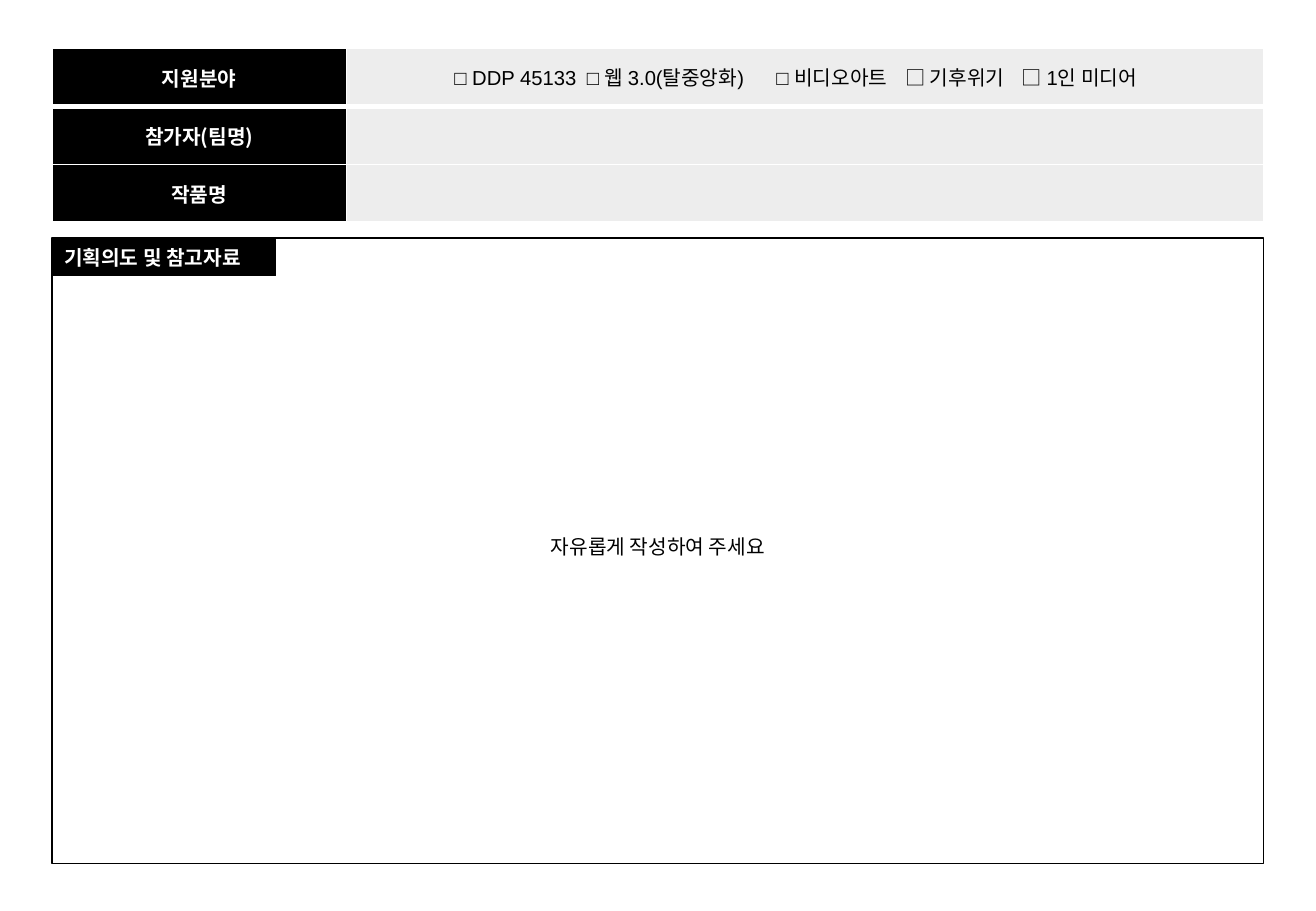
from dataclasses import dataclass

import lxml.etree
import pptx
import pptx.dml.color
import pptx.enum.shapes
import pptx.enum.text
import pptx.oxml.ns
import pptx.util

Inches = pptx.util.Inches
Pt = pptx.util.Pt
qn = pptx.oxml.ns.qn
Align = pptx.enum.text.PP_ALIGN
Anchor = pptx.enum.text.MSO_ANCHOR


@dataclass(frozen=True)
class Theme:
    """Colours, fonts and sizes of the form."""
    ink: str = "000000"
    paper: str = "FFFFFF"
    field: str = "EDEDED"
    latin: str = "Arial"
    korean: str = "Noto Sans CJK KR"
    size: int = 12
    rule: int = 1
    heavy_rule: int = 3


THEME = Theme()
LABELS = ["지원분야", "참가자(팀명)", "작품명"]
CATEGORIES = ["□ DDP 45133", "□ 웹 3.0(탈중앙화)", "□ 비디오아트", "□ 기후위기", "□ 1인 미디어"]
CATEGORY_STOPS = [1.09, 2.65, 3.71, 4.67]


def rgb(value):
    """Turn a hex string into a colour."""
    return pptx.dml.color.RGBColor.from_string(value)


def write(frame, text, align=Align.LEFT, color=THEME.ink, font=THEME.latin, bold=False, stops=()):
    """Set one styled paragraph in a text frame."""
    paragraph = frame.paragraphs[0]
    paragraph.text = text
    paragraph.alignment = align
    properties = paragraph._p.get_or_add_pPr()
    if stops:
        tabs = lxml.etree.SubElement(properties, qn("a:tabLst"))
        for stop in stops:
            lxml.etree.SubElement(tabs, qn("a:tab"), pos=str(Inches(stop)), algn="l")
    paragraph.font.name = font
    paragraph.font.size = Pt(THEME.size)
    paragraph.font.bold = bold
    paragraph.font.color.rgb = rgb(color)
    defaults = properties.find(qn("a:defRPr"))
    lxml.etree.SubElement(defaults, qn("a:ea"), typeface=THEME.korean)


def add_text(slide, left, top, width, height, text, inset=0.1, **style):
    """Add a wrapping line of text."""
    box = slide.shapes.add_textbox(Inches(left), Inches(top), Inches(width), Inches(height))
    box.text_frame.word_wrap = True
    box.text_frame.margin_left = Inches(inset)
    write(box.text_frame, text, **style)


def add_rectangle(slide, left, top, width, height, line_width, fill=None):
    """Add an outlined rectangle, hollow unless a fill is given."""
    rectangle = slide.shapes.add_shape(
        pptx.enum.shapes.MSO_SHAPE.RECTANGLE,
        Inches(left), Inches(top), Inches(width), Inches(height))
    rectangle.shadow.inherit = False
    if fill:
        rectangle.fill.solid()
        rectangle.fill.fore_color.rgb = rgb(fill)
    else:
        rectangle.fill.background()
    rectangle.line.color.rgb = rgb(THEME.ink)
    rectangle.line.width = Pt(line_width)
    return rectangle


def style_cell(cell, fill, top, bottom):
    """Give a cell its borders and fill."""
    properties = cell._tc.get_or_add_tcPr()
    for side, width in (("L", THEME.rule), ("R", THEME.rule), ("T", top), ("B", bottom)):
        line = lxml.etree.SubElement(properties, qn(f"a:ln{side}"), w=str(Pt(width)))
        paint = lxml.etree.SubElement(line, qn("a:solidFill"))
        lxml.etree.SubElement(paint, qn("a:srgbClr"), val=THEME.paper)
    cell.fill.solid()
    cell.fill.fore_color.rgb = rgb(fill)


def add_entry_table(slide, left, top, width, height):
    """Place the applicant table: labels beside blank fields."""
    table = slide.shapes.add_table(
        len(LABELS), 2, Inches(left), Inches(top), Inches(width), Inches(height)).table
    label_width = 2.42
    table.columns[0].width = Inches(label_width)
    table.columns[1].width = Inches(width - label_width)
    for index, label in enumerate(LABELS):
        above = THEME.heavy_rule if index == 1 else THEME.rule
        below = THEME.heavy_rule if index == 0 else THEME.rule
        name, field = table.cell(index, 0), table.cell(index, 1)
        style_cell(name, THEME.ink, above, below)
        style_cell(field, THEME.field, above, below)
        name.vertical_anchor = Anchor.MIDDLE
        name.margin_left = name.margin_right = Inches(0.19)
        name.margin_top = name.margin_bottom = Inches(0.09)
        write(name.text_frame, label, Align.CENTER, THEME.paper, THEME.korean, True)


def add_categories(slide, left, top, width, height):
    """Place the category checkboxes over the first field."""
    add_text(slide, left, top, width, height, "\t".join(CATEGORIES),
             inset=0.89, stops=CATEGORY_STOPS)


def add_plan_heading(slide, left, top, width, height):
    """Place the black heading of the plan area."""
    heading = add_rectangle(slide, left, top, width, height, 0.75, THEME.ink)
    frame = heading.text_frame
    frame.word_wrap = True
    frame.vertical_anchor = Anchor.MIDDLE
    write(frame, "기획의도 및 참고자료", color=THEME.paper, bold=True)


def main():
    """Build the application form and save it."""
    form = pptx.Presentation()
    form.slide_width = Inches(10.83)
    form.slide_height = Inches(7.5)
    slide = form.slides.add_slide(form.slide_layouts[6])
    left, width = 0.43, 9.97
    add_plan_heading(slide, left, 1.97, 1.84, 0.3)
    add_entry_table(slide, left, 0.4, width, 1.43)
    add_rectangle(slide, left, 1.96, width, 5.15, THEME.rule)
    add_text(slide, 0, 4.35, 10.83, 0.3, "자유롭게 작성하여 주세요", align=Align.CENTER)
    add_categories(slide, 2.85, 0.49, 7.44, 0.3)
    form.save("out.pptx")


if __name__ == "__main__":
    main()
